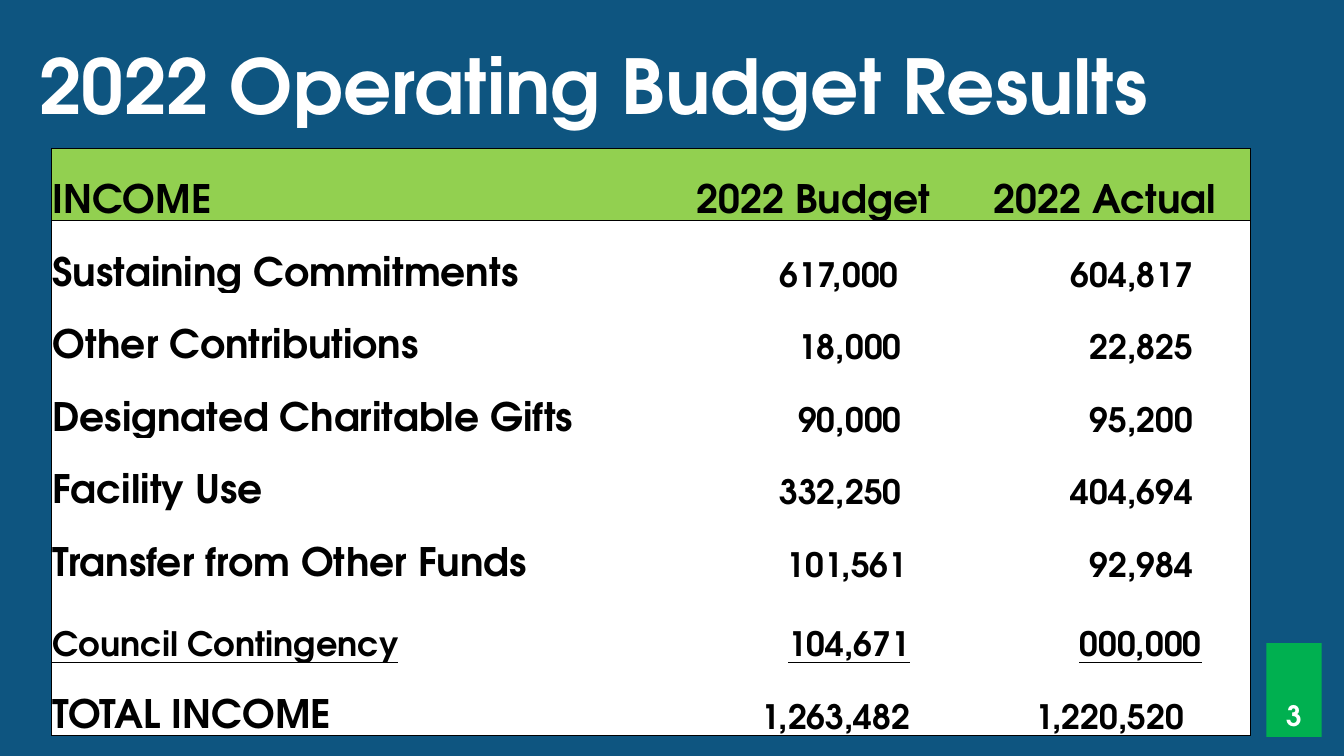
from dataclasses import dataclass
from typing import Any, NamedTuple

from lxml import etree
from pptx import Presentation
from pptx.dml.color import RGBColor
from pptx.enum.shapes import MSO_SHAPE
from pptx.enum.text import MSO_ANCHOR, PP_ALIGN
from pptx.oxml.ns import qn
from pptx.util import Inches, Pt

LEFT, CENTER = PP_ALIGN.LEFT, PP_ALIGN.CENTER
TOP, BOTTOM = MSO_ANCHOR.TOP, MSO_ANCHOR.BOTTOM
RECTANGLE = MSO_SHAPE.RECTANGLE
TITLE_ONLY_LAYOUT = 5
SLIDE_WIDTH, SLIDE_HEIGHT = Inches(13.33), Inches(7.5)


@dataclass(frozen=True)
class Theme:
    font: str = "TeX Gyre Adventor"
    background: str = "0E5580"
    header: str = "92D050"
    body: str = "FFFFFF"
    badge: str = "00B050"
    light_text: str = "FFFFFF"
    dark_text: str = "000000"
    border: str = "000000"
    border_width: float = 0.5
    title_size: int = 54
    label_size: int = 28
    amount_size: int = 24
    badge_size: int = 20


THEME = Theme()


class Box(NamedTuple):
    """Position and size in percent of the slide."""
    left: float
    top: float
    width: float
    height: float


class Amount(NamedTuple):
    """A figure and its right edge in percent of the column."""
    text: str
    edge: float = 80


class IncomeRow(NamedTuple):
    label: str
    budget: Amount
    actual: Amount
    underlined: bool = False


TITLE_BOX = Box(2.18, 4.53, 89.12, 17.47)
BADGE_BOX = Box(94.22, 85.07, 4.13, 12.4)
TABLE_BOX = Box(3.83, 19.6, 89.2, 77.73)
LABEL_COLUMN, AMOUNT_COLUMN = 45.84, 21.68
ROW_HEIGHT, UNDERLINED_ROW_HEIGHT = 9.6, 10.53
UNDERLINE_END = 87

HEADINGS = ("INCOME", "2022 Budget", "2022 Actual")
INCOME_ROWS = (
    IncomeRow("Sustaining Commitments", Amount("617,000", 79), Amount("604,817")),
    IncomeRow("Other Contributions", Amount("18,000"), Amount("22,825")),
    IncomeRow("Designated Charitable Gifts", Amount("90,000"), Amount("95,200")),
    IncomeRow("Facility Use", Amount("332,250"), Amount("404,694")),
    IncomeRow("Transfer from Other Funds", Amount("101,561", 82), Amount("92,984")),
    IncomeRow("Council Contingency", Amount("104,671", 83), Amount("000,000", 83), True),
    IncomeRow("TOTAL INCOME", Amount("1,263,482", 83), Amount("1,220,520", 77)),
)


def across(percent: float) -> int:
    return round(SLIDE_WIDTH * percent / 100)


def down(percent: float) -> int:
    return round(SLIDE_HEIGHT * percent / 100)


def place(box: Box) -> tuple[int, int, int, int]:
    return across(box.left), down(box.top), across(box.width), down(box.height)


def set_values(target: Any, values: dict[str, Any]) -> None:
    for name, value in values.items():
        setattr(target, name, value)


def write(paragraph: Any, text: str, size: int, color: str,
          alignment: Any = LEFT, underline: bool = False) -> None:
    paragraph.alignment = alignment
    run = paragraph.add_run()
    run.text = text
    set_values(run.font, {"name": THEME.font, "size": Pt(size), "bold": True,
                          "underline": underline})
    run.font.color.rgb = RGBColor.from_string(color)


def add_tab_stops(paragraph: Any, stops: list[tuple[float, str]]) -> None:
    """Add stops given in percent of an amount column."""
    tab_list = etree.SubElement(paragraph._p.get_or_add_pPr(), qn("a:tabLst"))
    for percent, alignment in stops:
        position = round(across(AMOUNT_COLUMN) * percent / 100)
        etree.SubElement(tab_list, qn("a:tab"), pos=str(position), algn=alignment)


def write_amount(paragraph: Any, amount: Amount, underlined: bool) -> None:
    stops, text = [(amount.edge, "r")], f"\t{amount.text}"
    if underlined:
        stops.append((UNDERLINE_END, "l"))
        text += "\t"
    add_tab_stops(paragraph, stops)
    write(paragraph, text, THEME.amount_size, THEME.dark_text, underline=underlined)


def set_borders(cell: Any, sides: dict[str, bool]) -> None:
    properties = cell._tc.get_or_add_tcPr()
    for index, (side, visible) in enumerate(sides.items()):
        line = etree.Element(qn(f"a:{side}"), w=str(Pt(THEME.border_width)))
        if visible:
            fill = etree.SubElement(line, qn("a:solidFill"))
            etree.SubElement(fill, qn("a:srgbClr"), val=THEME.border)
        else:
            etree.SubElement(line, qn("a:noFill"))
        properties.insert(index, line)


def format_cell(cell: Any, row: int, column: int) -> None:
    margin = Inches(0.01)
    set_values(cell, {"vertical_anchor": BOTTOM, "margin_left": margin,
                      "margin_right": margin, "margin_top": margin,
                      "margin_bottom": 0})
    cell.fill.solid()
    color = THEME.body if row else THEME.header
    cell.fill.fore_color.rgb = RGBColor.from_string(color)
    set_borders(cell, {"lnL": column == 0, "lnR": column == len(HEADINGS) - 1,
                       "lnT": row <= 1, "lnB": row in (0, len(INCOME_ROWS))})


def add_title(slide: Any) -> None:
    title = slide.shapes.title
    title.left, title.top, title.width, title.height = place(TITLE_BOX)
    set_values(title.text_frame, {"word_wrap": True, "vertical_anchor": TOP})
    write(title.text_frame.paragraphs[0], "2022 Operating Budget Results",
          THEME.title_size, THEME.light_text)


def add_page_badge(slide: Any) -> None:
    badge = slide.shapes.add_shape(RECTANGLE, *place(BADGE_BOX))
    badge.shadow.inherit = False
    badge.fill.solid()
    badge.fill.fore_color.rgb = RGBColor.from_string(THEME.badge)
    badge.line.fill.background()
    badge.text_frame.vertical_anchor = BOTTOM
    write(badge.text_frame.paragraphs[0], "3", THEME.badge_size,
          THEME.light_text, CENTER)


def add_income_table(slide: Any) -> None:
    table = slide.shapes.add_table(len(INCOME_ROWS) + 1, len(HEADINGS),
                                   *place(TABLE_BOX)).table
    set_values(table, {"first_row": False, "horz_banding": False})
    for column, width in zip(table.columns, (LABEL_COLUMN, AMOUNT_COLUMN, AMOUNT_COLUMN)):
        column.width = across(width)
    for row in table.rows:
        row.height = down(ROW_HEIGHT)

    # Header row
    for column, heading in enumerate(HEADINGS):
        cell = table.cell(0, column)
        format_cell(cell, 0, column)
        write(cell.text_frame.paragraphs[0], heading, THEME.label_size,
              THEME.dark_text, CENTER if column else LEFT)

    # Income rows
    for row, income in enumerate(INCOME_ROWS, start=1):
        if income.underlined:
            table.rows[row].height = down(UNDERLINED_ROW_HEIGHT)
        cells = [table.cell(row, column) for column in range(len(HEADINGS))]
        for column, cell in enumerate(cells):
            format_cell(cell, row, column)
        label_size = THEME.amount_size if income.underlined else THEME.label_size
        write(cells[0].text_frame.paragraphs[0], income.label, label_size,
              THEME.dark_text, underline=income.underlined)
        for cell, amount in zip(cells[1:], (income.budget, income.actual)):
            write_amount(cell.text_frame.paragraphs[0], amount, income.underlined)


def main() -> None:
    presentation = Presentation()
    set_values(presentation, {"slide_width": SLIDE_WIDTH, "slide_height": SLIDE_HEIGHT})
    slide = presentation.slides.add_slide(presentation.slide_layouts[TITLE_ONLY_LAYOUT])
    slide.background.fill.solid()
    slide.background.fill.fore_color.rgb = RGBColor.from_string(THEME.background)
    add_title(slide)
    add_page_badge(slide)
    add_income_table(slide)
    presentation.save("out.pptx")


if __name__ == "__main__":
    main()
